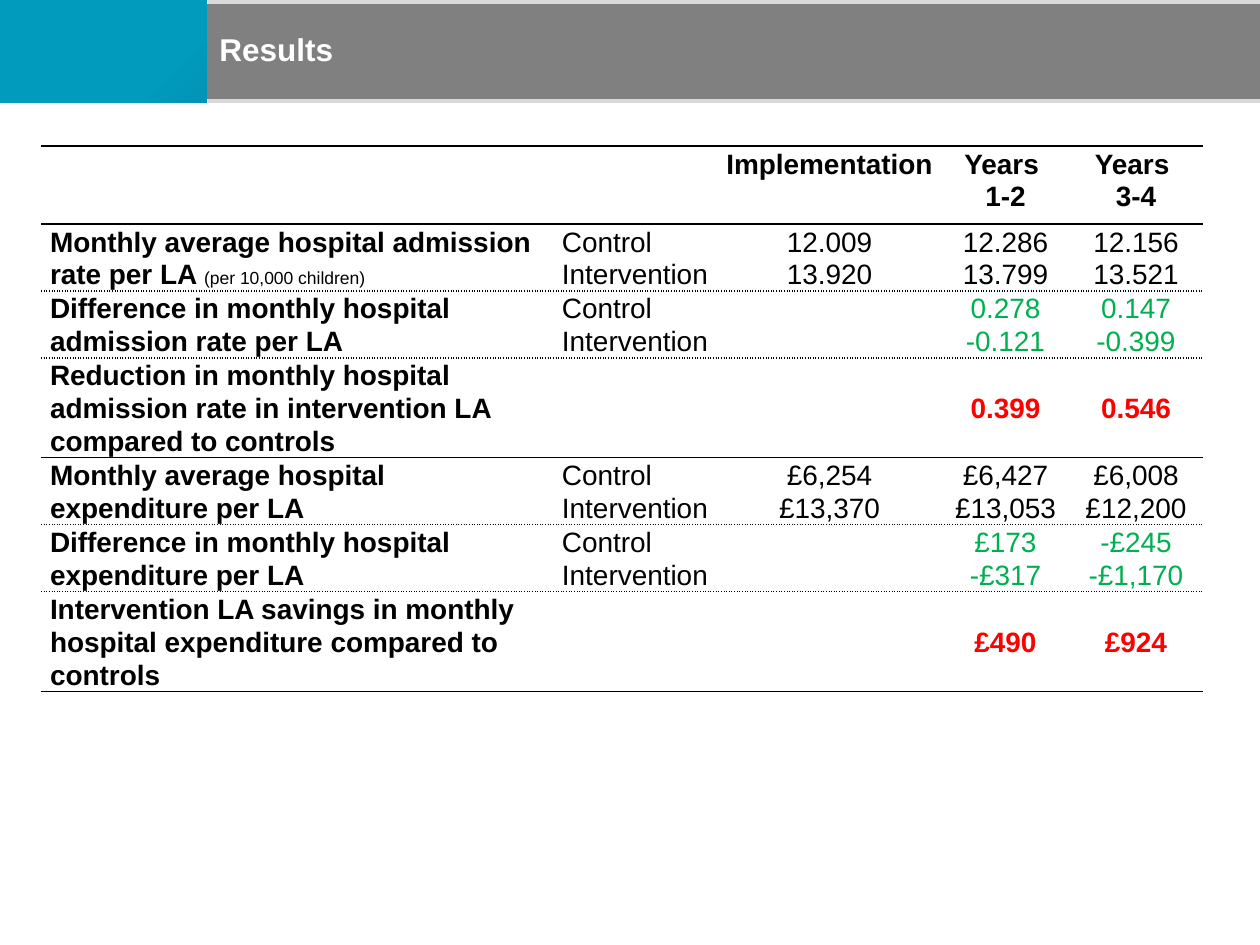
"""Build the results slide: a banner and a table of admission and expenditure outcomes."""
from dataclasses import dataclass

from lxml.etree import SubElement
from pptx import Presentation
from pptx.dml.color import RGBColor
from pptx.enum.shapes import MSO_CONNECTOR, MSO_SHAPE
from pptx.enum.text import MSO_ANCHOR, PP_ALIGN
from pptx.oxml import parse_xml
from pptx.oxml.ns import nsdecls, qn
from pptx.util import Emu, Pt

PX = 914400 / 126
FONT = "Arial"
BLACK = RGBColor(0x00, 0x00, 0x00)
WHITE = RGBColor(0xFF, 0xFF, 0xFF)
GREY = RGBColor(0x80, 0x80, 0x80)
LIGHT_GREY = RGBColor(0xD9, 0xD9, 0xD9)
GREEN = RGBColor(0x00, 0xB0, 0x50)
RED = RGBColor(0xFF, 0x00, 0x00)
BANNER_STOPS = ((17, "009BBD"), (50, "0E6394"), (100, "1B2A6B"))
COLUMN_WIDTHS = (512, 164, 225, 127, 134)
GROUPS = "Control\nIntervention"


@dataclass(frozen=True)
class Row:
    height: int
    texts: tuple
    top: str = "sysDot"
    bottom: str = "sysDot"
    colour: RGBColor = BLACK
    bold_values: bool = False
    anchor: MSO_ANCHOR = MSO_ANCHOR.MIDDLE
    note: str = ""


ROWS = (
    Row(78, ("", "", "Implementation", "Years \n1-2", "Years \n3-4"),
        top="solid", bottom="solid", bold_values=True, anchor=MSO_ANCHOR.TOP),
    Row(64, ("Monthly average hospital admission rate per LA ", GROUPS,
             "12.009\n13.920", "12.286\n13.799", "12.156\n13.521"),
        top="solid", note="(per 10,000 children)"),
    Row(64, ("Difference in monthly hospital admission rate per LA", GROUPS,
             "", "0.278\n-0.121", "0.147\n-0.399"), colour=GREEN),
    Row(96, ("Reduction in monthly hospital admission rate in intervention LA "
             "compared to controls", "", "", "0.399", "0.546"),
        bottom="solid", colour=RED, bold_values=True),
    Row(64, ("Monthly average hospital expenditure per LA", GROUPS,
             "£6,254\n£13,370", "£6,427\n£13,053", "£6,008\n£12,200"),
        top="solid", anchor=MSO_ANCHOR.TOP),
    Row(64, ("Difference in monthly hospital expenditure per LA", GROUPS,
             "", "£173\n-£317", "-£245\n-£1,170"), colour=GREEN, anchor=MSO_ANCHOR.TOP),
    Row(96, ("Intervention LA savings in monthly hospital expenditure compared "
             "to controls", "", "", "£490", "£924"),
        bottom="solid", colour=RED, bold_values=True),
)


def px(length: int) -> Emu:
    return Emu(round(length * PX))


def add_band(slide, left: int, top: int, width: int, height: int, colour: RGBColor):
    band = slide.shapes.add_shape(MSO_SHAPE.RECTANGLE, px(left), px(top), px(width), px(height))
    band.shadow.inherit = False
    band.fill.solid()
    band.fill.fore_color.rgb = colour
    band.line.fill.background()
    return band


def style_run(run, size: int, bold: bool, colour: RGBColor) -> None:
    run.font.name = FONT
    run.font.size = Pt(size)
    run.font.bold = bold
    run.font.color.rgb = colour


def add_banner(slide) -> None:
    banner = add_band(slide, 0, 0, 1260, 103, GREY)
    stops = "".join(
        f'<a:gs pos="{position * 1000}"><a:srgbClr val="{colour}"/></a:gs>'
        for position, colour in BANNER_STOPS)
    properties = banner.element.spPr
    properties.replace(properties.find(qn("a:solidFill")), parse_xml(
        f'<a:gradFill {nsdecls("a")} rotWithShape="1"><a:gsLst>{stops}</a:gsLst>'
        '<a:lin ang="2700000" scaled="0"/></a:gradFill>'))
    add_band(slide, 207, 0, 1053, 103, LIGHT_GREY)
    divider = slide.shapes.add_connector(
        MSO_CONNECTOR.STRAIGHT, px(207), px(0), px(207), px(123))
    divider.line.color.rgb = WHITE
    divider.line.width = Pt(0.5)
    SubElement(divider.element.spPr, qn("a:effectLst"))

    title = add_band(slide, 207, 4, 1053, 95, GREY)
    frame = title.text_frame
    frame.text = "Results"
    frame.vertical_anchor = MSO_ANCHOR.MIDDLE
    heading = frame.paragraphs[0]
    heading.alignment = PP_ALIGN.LEFT
    heading.line_spacing = 0.9
    style_run(heading.runs[0], 18, True, WHITE)


def set_borders(cell, top: str, bottom: str) -> None:
    properties = cell._tc.get_or_add_tcPr()
    for side, dash in (("L", ""), ("R", ""), ("T", top), ("B", bottom)):
        border = SubElement(properties, qn(f"a:ln{side}"), w=str(Pt(1)))
        if not dash:
            SubElement(border, qn("a:noFill"))
            continue
        fill = SubElement(border, qn("a:solidFill"))
        SubElement(fill, qn("a:srgbClr"), val=str(BLACK))
        SubElement(border, qn("a:prstDash"), val=dash)


def fill_cell(cell, row: Row, column: int) -> None:
    set_borders(cell, row.top, row.bottom)
    cell.fill.background()
    cell.margin_left = cell.margin_right = px(9)
    cell.margin_top = px(1)
    cell.margin_bottom = 0
    cell.vertical_anchor = MSO_ANCHOR.TOP if column == 1 else row.anchor
    cell.text_frame.text = row.texts[column]
    is_value = column > 1
    for paragraph in cell.text_frame.paragraphs:
        paragraph.alignment = PP_ALIGN.CENTER if is_value else PP_ALIGN.LEFT
        paragraph.line_spacing = 1.06
        for run in paragraph.runs:
            style_run(run, 16, column == 0 or (is_value and row.bold_values),
                      row.colour if is_value else BLACK)
    if column == 0 and row.note:
        note = cell.text_frame.paragraphs[0].add_run()
        note.text = row.note
        style_run(note, 10, False, BLACK)


def add_results(slide) -> None:
    table = slide.shapes.add_table(
        len(ROWS), len(COLUMN_WIDTHS), px(41), px(146),
        px(sum(COLUMN_WIDTHS)), px(sum(row.height for row in ROWS))).table
    table.first_row = False
    table.horz_banding = False
    for column, width in zip(table.columns, COLUMN_WIDTHS):
        column.width = px(width)
    for index, row in enumerate(ROWS):
        table.rows[index].height = px(row.height)
        for column in range(len(COLUMN_WIDTHS)):
            fill_cell(table.cell(index, column), row, column)


def main() -> None:
    presentation = Presentation()
    presentation.slide_width = px(1260)
    presentation.slide_height = px(945)
    slide = presentation.slides.add_slide(presentation.slide_layouts[6])
    add_banner(slide)
    add_results(slide)
    presentation.save("out.pptx")


if __name__ == "__main__":
    main()
